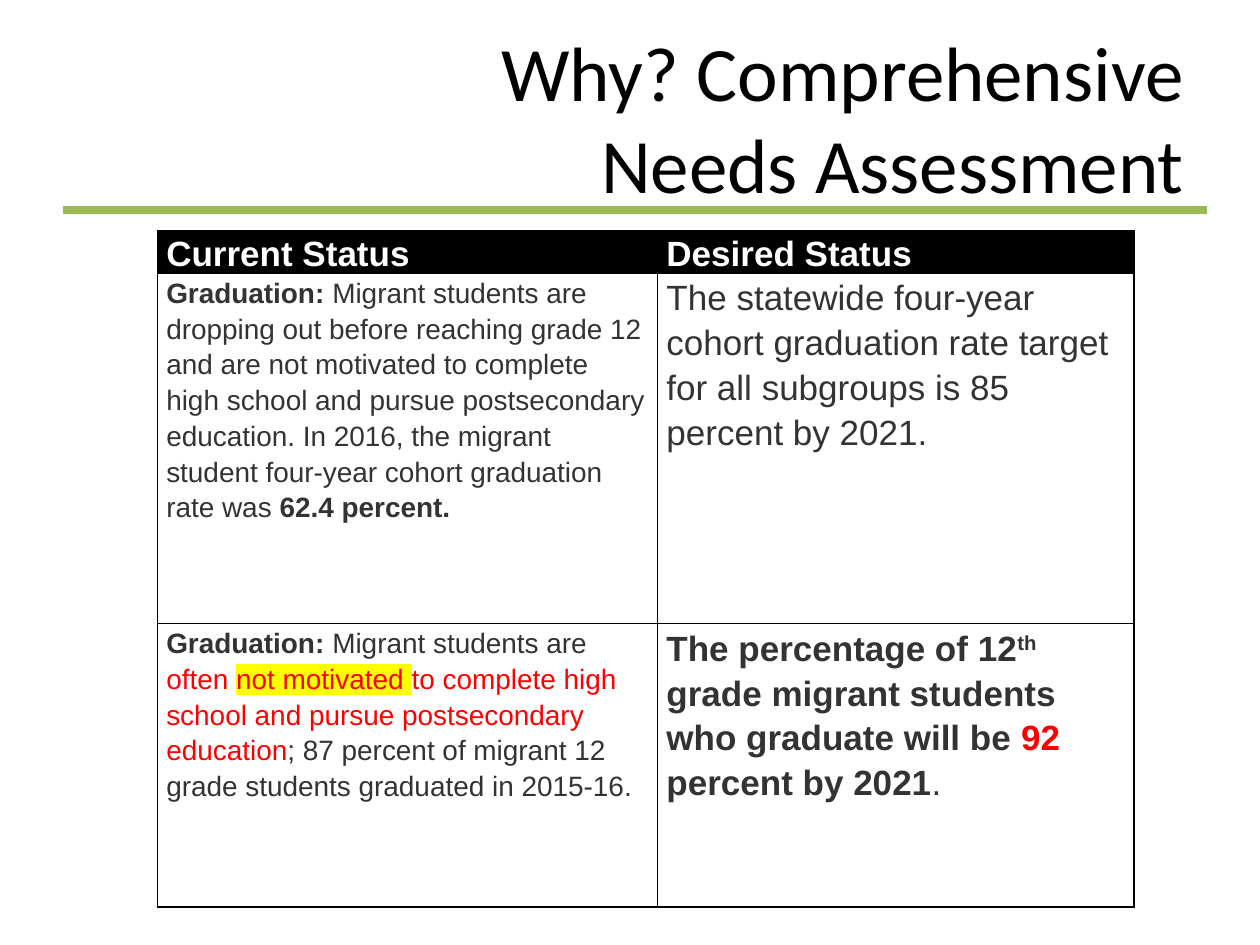
from dataclasses import dataclass

from lxml.etree import SubElement
from pptx import Presentation
from pptx.dml.color import RGBColor as Rgb
from pptx.enum.shapes import MSO_CONNECTOR as Connector
from pptx.enum.text import MSO_ANCHOR as Anchor, PP_ALIGN as Align
from pptx.oxml.ns import qn
from pptx.util import Inches, Pt


@dataclass(frozen=True)
class Theme:
    black: str = "000000"
    white: str = "FFFFFF"
    body: str = "333333"
    accent: str = "FF0000"
    marker: str = "FFFF00"
    rule: str = "98B955"
    title_font: str = "Calibri"
    table_font: str = "Arial"
    title_size: int = 44
    large: int = 20
    small: int = 16
    rule_width: float = 4.5
    border_width: float = 1


THEME = Theme()


@dataclass(frozen=True)
class Span:
    text: str
    bold: bool = False
    color: str = THEME.body
    highlight: str = ""
    superscript: bool = False


@dataclass(frozen=True)
class CellText:
    spans: tuple[Span, ...]
    size: int = THEME.large
    header: bool = False


def heading(text: str) -> CellText:
    return CellText((Span(text, bold=True, color=THEME.white),), header=True)


ROWS = (
    (heading("Current Status"), heading("Desired Status")),
    (
        CellText((
            Span("Graduation: ", bold=True),
            Span("Migrant students are dropping out before reaching grade 12 and are "
                 "not motivated to complete high school and pursue postsecondary "
                 "education. In 2016, the migrant student four-year cohort "
                 "graduation rate was "),
            Span("62.4 percent.", bold=True),
        ), THEME.small),
        CellText((
            Span("The statewide four-year cohort graduation rate target for all "
                 "subgroups is 85 percent by 2021."),
        )),
    ),
    (
        CellText((
            Span("Graduation: ", bold=True),
            Span("Migrant students are "),
            Span("often ", color=THEME.accent),
            Span("not motivated ", color=THEME.accent, highlight=THEME.marker),
            Span("to complete high school and pursue postsecondary education",
                 color=THEME.accent),
            Span("; 87 percent of migrant 12 grade students graduated in 2015-16."),
        ), THEME.small),
        CellText((
            Span("The percentage of 12", bold=True),
            Span("th", bold=True, superscript=True),
            Span(" grade migrant students who graduate will be ", bold=True),
            Span("92 ", bold=True, color=THEME.accent),
            Span("percent by 2021", bold=True),
            Span("."),
        )),
    ),
)
COLUMN_WIDTHS = (3.97, 3.78)
ROW_HEIGHTS = (0.34, 2.78, 2.25)


def add_title(page, lines: tuple[str, ...]) -> None:
    box = page.shapes.add_textbox(Inches(0.5), Inches(0.3), Inches(9), Inches(1.25))
    frame = box.text_frame
    frame.word_wrap = True
    frame.vertical_anchor = Anchor.MIDDLE
    para = frame.paragraphs[0]
    para.text = "\v".join(lines)
    para.alignment = Align.RIGHT
    para.font.name = THEME.title_font
    para.font.size = Pt(THEME.title_size)
    para.font.color.rgb = Rgb.from_string(THEME.black)


def add_rule(page) -> None:
    rule = page.shapes.add_connector(
        Connector.STRAIGHT, Inches(0.5), Inches(1.67), Inches(9.58), Inches(1.67))
    rule.line.color.rgb = Rgb.from_string(THEME.rule)
    rule.line.width = Pt(THEME.rule_width)
    SubElement(rule._element.spPr, qn("a:effectLst"))


def add_span(para, span: Span) -> None:
    run = para.add_run()
    run.text = span.text
    run.font.bold = span.bold
    run.font.color.rgb = Rgb.from_string(span.color)
    properties = run._r.get_or_add_rPr()
    if span.superscript:
        properties.set("baseline", "30000")
    if span.highlight:
        mark = SubElement(properties, qn("a:highlight"))
        SubElement(mark, qn("a:srgbClr"), val=span.highlight)


def set_borders(cell) -> None:
    properties = cell._tc.get_or_add_tcPr()
    for position, side in enumerate(("lnL", "lnR", "lnT", "lnB")):
        line = SubElement(properties, qn(f"a:{side}"), w=str(Pt(THEME.border_width)))
        fill = SubElement(line, qn("a:solidFill"))
        SubElement(fill, qn("a:srgbClr"), val=THEME.black)
        properties.insert(position, line)  # borders precede the cell fill


def fill_cell(cell, content: CellText) -> None:
    cell.margin_left = cell.margin_right = Inches(0.07)
    cell.margin_top = cell.margin_bottom = 0
    cell.vertical_anchor = Anchor.BOTTOM if content.header else Anchor.TOP
    cell.fill.solid()
    cell.fill.fore_color.rgb = Rgb.from_string(
        THEME.black if content.header else THEME.white)
    set_borders(cell)

    para = cell.text_frame.paragraphs[0]
    if not content.header:
        para.line_spacing = 1.15
        para.space_after = Pt(3)
    para.font.name = THEME.table_font
    para.font.size = Pt(content.size)
    for span in content.spans:
        add_span(para, span)


def add_status_table(page) -> None:
    table = page.shapes.add_table(
        len(ROW_HEIGHTS), len(COLUMN_WIDTHS), Inches(1.25), Inches(1.83),
        Inches(sum(COLUMN_WIDTHS)), Inches(sum(ROW_HEIGHTS))).table
    table.horz_banding = False
    for column, width in zip(table.columns, COLUMN_WIDTHS):
        column.width = Inches(width)
    for row, height, contents in zip(table.rows, ROW_HEIGHTS, ROWS):
        row.height = Inches(height)
        for cell, content in zip(row.cells, contents):
            fill_cell(cell, content)


def main() -> None:
    deck = Presentation()
    deck.slide_width, deck.slide_height = Inches(10), Inches(7.5)
    page = deck.slides.add_slide(deck.slide_layouts[6])

    # Title and the rule beneath it
    add_title(page, ("Why? Comprehensive", "Needs Assessment"))
    add_rule(page)

    # Current and desired status
    add_status_table(page)

    deck.save("out.pptx")


if __name__ == "__main__":
    main()
